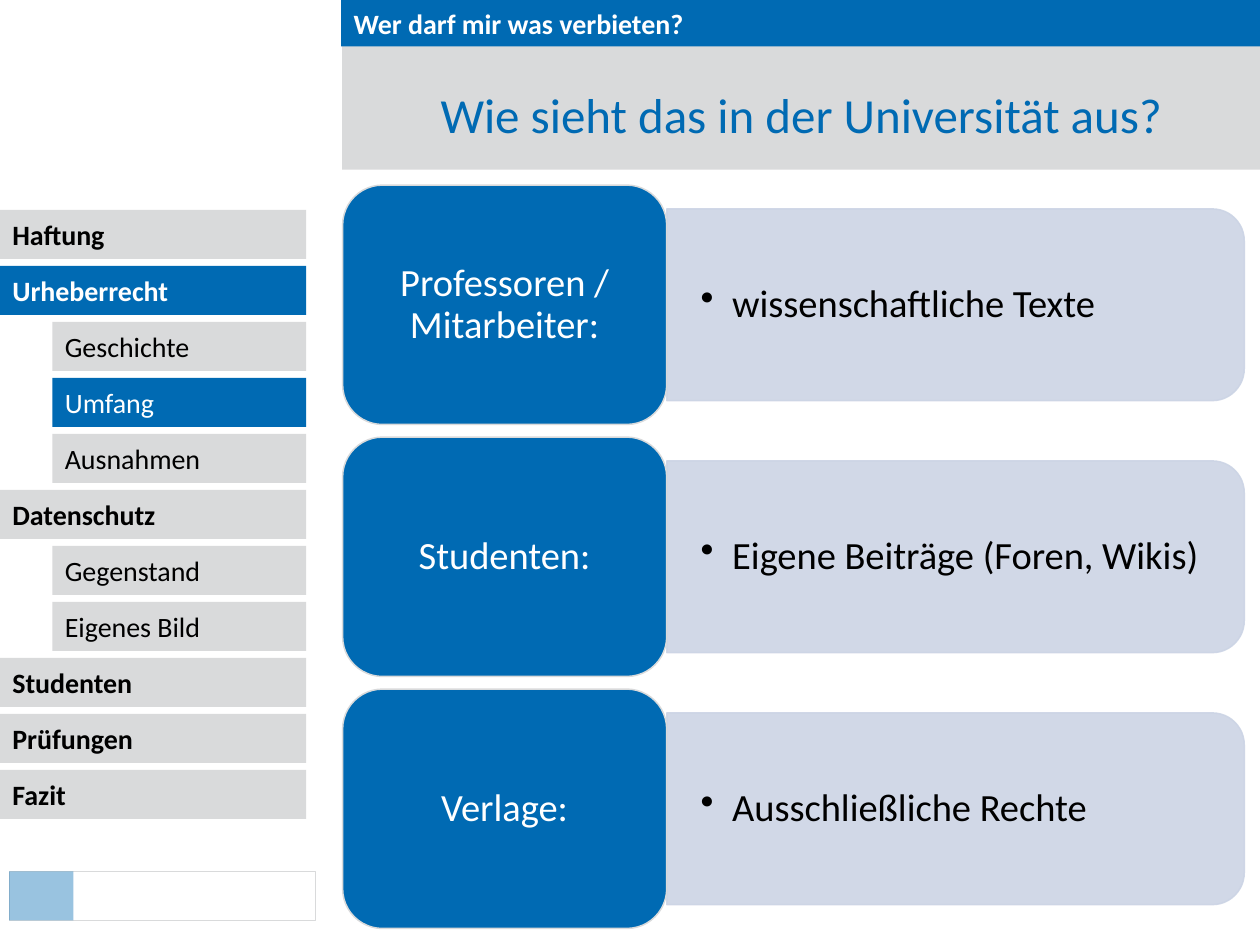
from lxml import etree
from pptx import Presentation
from pptx.dml.color import RGBColor
from pptx.enum.shapes import MSO_SHAPE
from pptx.enum.text import MSO_ANCHOR, PP_ALIGN
from pptx.oxml.ns import qn
from pptx.util import Pt

RECT = MSO_SHAPE.RECTANGLE
ROUNDED = MSO_SHAPE.ROUNDED_RECTANGLE
ROUND_TOP = MSO_SHAPE.ROUND_2_SAME_RECTANGLE
LEFT, CENTER = PP_ALIGN.LEFT, PP_ALIGN.CENTER
MIDDLE = MSO_ANCHOR.MIDDLE

BLUE, GREY, PALE = "006AB3", "D9DADB", "CCD4E5"
BLACK, WHITE = "000000", "FFFFFF"


def paint(color_format, color, alpha=100):
    """Set a colour from a hex string, with opacity in percent."""
    color_format.rgb = RGBColor.from_string(color)
    if alpha < 100:
        clr = color_format._xFill.find(qn("a:srgbClr"))
        etree.SubElement(clr, qn("a:alpha"), val=str(alpha * 1000))


def write(shape, text, size=16, color=BLACK, bold=False, align=LEFT,
          insets=(7.2, 3.6, 7.2, 3.6), spacing=None, bullet_indent=0):
    frame = shape.text_frame
    frame.word_wrap = True
    frame.vertical_anchor = MIDDLE
    (frame.margin_left, frame.margin_top,
     frame.margin_right, frame.margin_bottom) = map(Pt, insets)
    paragraph = frame.paragraphs[0]
    paragraph.alignment = align
    if spacing:
        paragraph.line_spacing = spacing
    if bullet_indent:
        props = paragraph._p.get_or_add_pPr()
        props.set("marL", str(Pt(bullet_indent)))
        props.set("indent", str(-Pt(bullet_indent)))
        etree.SubElement(props, qn("a:buChar"), char="•")
    run = paragraph.add_run()
    run.text = text
    run.font.name = "Calibri"
    run.font.size = Pt(size)
    run.font.bold = bold
    paint(run.font.color, color)


class Deck:
    def __init__(self, width, height):
        self.file = Presentation()
        self.file.slide_width, self.file.slide_height = Pt(width), Pt(height)
        self.slide = self.file.slides.add_slide(self.file.slide_layouts[6])

    def box(self, x, y, w, h, fill=None, line=None, line_width=0.85,
            alpha=100, kind=RECT):
        shape = self.slide.shapes.add_shape(kind, Pt(x), Pt(y), Pt(w), Pt(h))
        shape.shadow.inherit = False
        if fill:
            shape.fill.solid()
            paint(shape.fill.fore_color, fill, alpha)
        else:
            shape.fill.background()
        if line:
            shape.line.width = Pt(line_width)
            paint(shape.line.color, line, alpha)
        else:
            shape.line.fill.background()
        return shape

    def text(self, x, y, w, h, text, **style):
        label = self.slide.shapes.add_textbox(Pt(x), Pt(y), Pt(w), Pt(h))
        write(label, text, **style)

    def panel(self, x, y, w, h):
        """Bar rounded on its right side: a round-top shape turned by 90°."""
        shape = self.box(x + (w - h) / 2, y + (h - w) / 2, h, w, PALE, PALE,
                         alpha=90, kind=ROUND_TOP)
        shape.rotation = 90


MENU = [  # entry, level, active
    ("Haftung", 0, False),
    ("Urheberrecht", 0, True),
    ("Geschichte", 1, False),
    ("Umfang", 1, True),
    ("Ausnahmen", 1, False),
    ("Datenschutz", 0, False),
    ("Gegenstand", 1, False),
    ("Eigenes Bild", 1, False),
    ("Studenten", 0, False),
    ("Prüfungen", 0, False),
    ("Fazit", 0, False),
]
GROUPS = [
    ("Professoren / Mitarbeiter:", "wissenschaftliche Texte"),
    ("Studenten:", "Eigene Beiträge (Foren, Wikis)"),
    ("Verlage:", "Ausschließliche Rechte"),
]


def main():
    deck = Deck(720, 540)

    # Navigation menu
    for row, (entry, level, active) in enumerate(MENU):
        indent = 30 * level
        item = deck.box(indent, 120 + 32 * row, 175 - indent, 28,
                        BLUE if active else GREY)
        write(item, entry, color=WHITE if active else BLACK, bold=level == 0)

    # Progress bar
    deck.box(5.2, 498, 175, 28, line=GREY, line_width=0.2)
    deck.box(5.2, 498, 36.7, 28, BLUE, alpha=40)

    # Title and section header
    title = deck.box(195.6, -1.5, 524.4, 98.5, GREY)
    write(title, "Wie sieht das in der Universität aus?", size=28, color=BLUE,
          align=CENTER, insets=(7.2, 38.2, 7.2, 3.6))
    section = deck.box(195, 0, 525, 26.6, BLUE)
    write(section, "Wer darf mir was verbieten?", color=WHITE, bold=True)

    # Groups and their works
    tile_x, tile_w, tile_h = 195.8, 185.2, 136.8
    panel_x, panel_w, panel_h = tile_x + tile_w, 330, 109.6
    for row, (group, works) in enumerate(GROUPS):
        top = 105.8 + 144 * row
        panel_y = top + (tile_h - panel_h) / 2
        deck.panel(panel_x, panel_y, panel_w, panel_h)
        deck.text(panel_x, panel_y + 5.4, panel_w - 5.4, panel_h - 10.8, works,
                  size=22, insets=(19.4, 10, 19.4, 10), spacing=0.9,
                  bullet_indent=18)
        tile = deck.box(tile_x, top, tile_w, tile_h, BLUE, GREY, kind=ROUNDED)
        write(tile, group, size=22, color=WHITE, align=CENTER, spacing=0.9,
              insets=(6.5, 3.6, 6.5, 3.6))

    deck.file.save("out.pptx")


if __name__ == "__main__":
    main()
